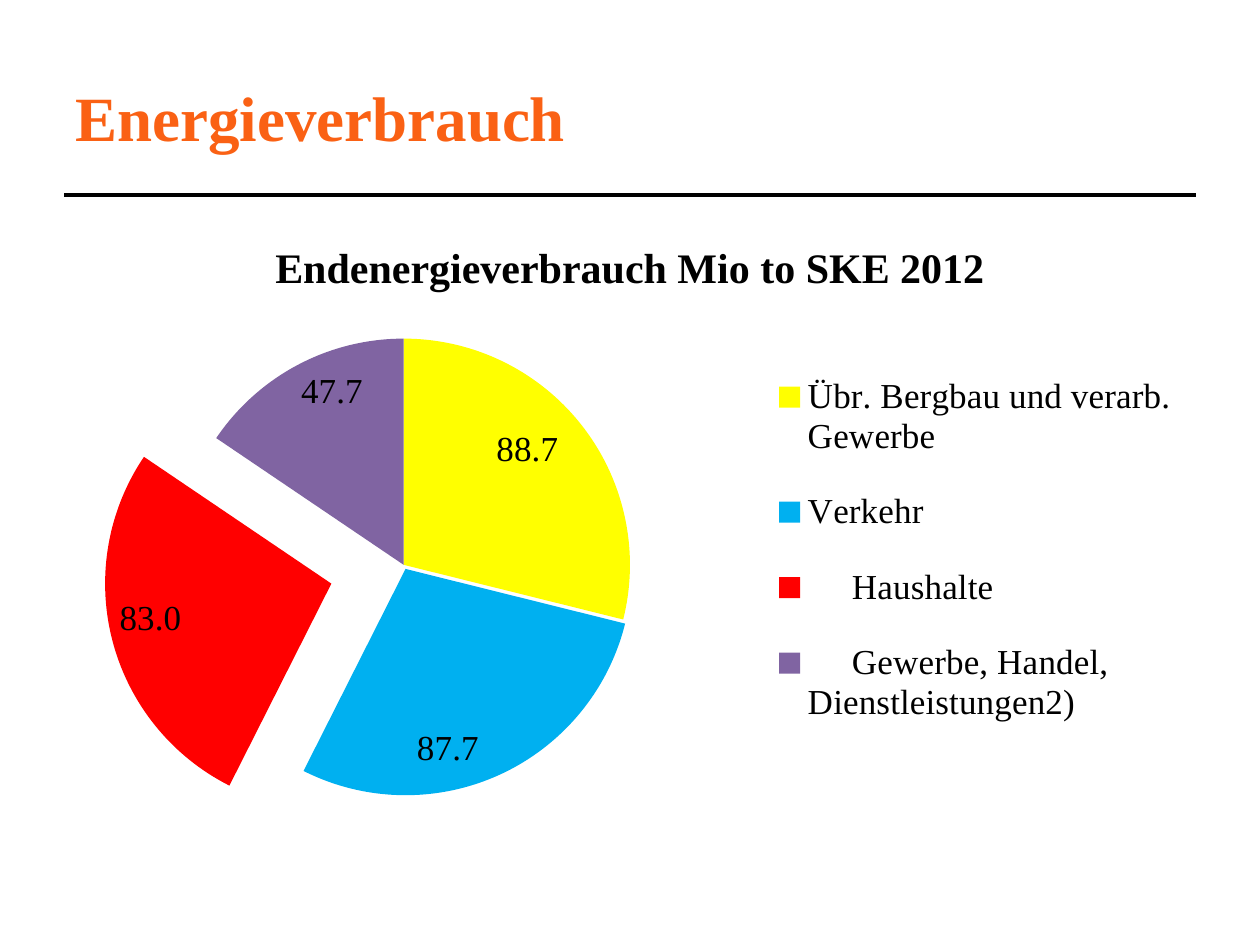
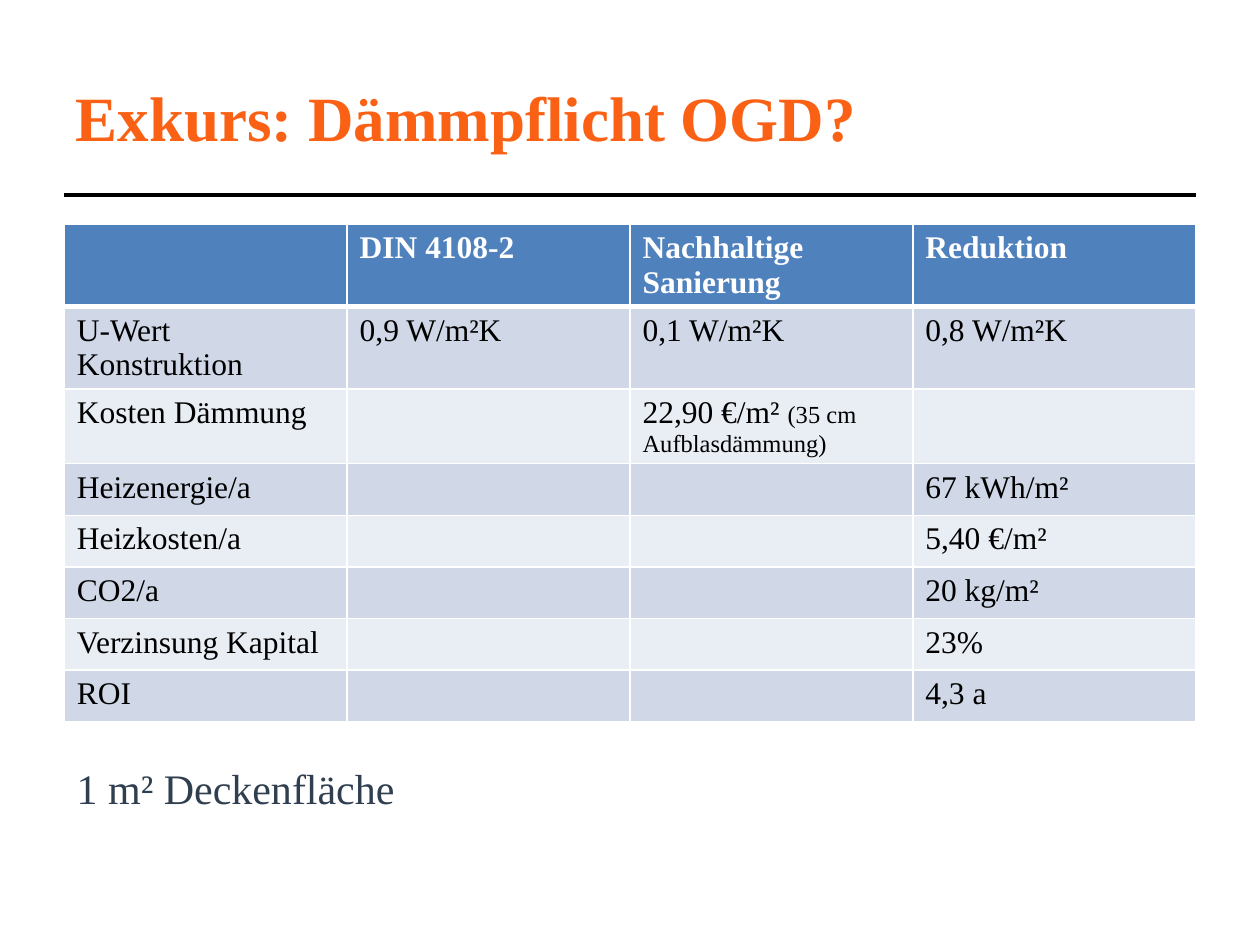
from lxml import etree
from pptx import Presentation
from pptx.chart.data import CategoryChartData
from pptx.dml.color import RGBColor
from pptx.enum.chart import XL_CHART_TYPE, XL_LABEL_POSITION, XL_LEGEND_POSITION
from pptx.enum.shapes import MSO_CONNECTOR
from pptx.enum.text import MSO_ANCHOR, PP_ALIGN
from pptx.oxml import parse_xml
from pptx.oxml.ns import nsdecls, qn
from pptx.util import Inches, Pt

FONT = "Times New Roman"
ORANGE, BLACK, WHITE, SLATE = "FA6114", "000000", "FFFFFF", "303F50"
HEADER_FILL = "4F81BD"
BAND_FILLS = ("D0D8E8", "E9EDF4")
LEFT, WIDTH = 0.51, 8.98
CHART_TITLE = "Endenergieverbrauch Mio to SKE 2012"
SECTORS = [
    ("Übr. Bergbau und verarb. Gewerbe", 88.7, "FFFF00", 0),
    ("Verkehr", 87.7, "00B0F0", 2),
    ("     Haushalte", 83.0, "FF0000", 33),
    ("     Gewerbe, Handel, Dienstleistungen2)", 47.7, "8064A2", 0),
]
INSULATION_ROWS = [
    ("", "DIN 4108-2", "Nachhaltige Sanierung", "Reduktion"),
    ("U-Wert Konstruktion", "0,9 W/m²K", "0,1 W/m²K", "0,8 W/m²K"),
    ("Kosten Dämmung", "", ("22,90 €/m² ", "(35 cm Aufblasdämmung)"), ""),
    ("Heizenergie/a", "", "", "67 kWh/m²"),
    ("Heizkosten/a", "", "", "5,40 €/m²"),
    ("CO2/a", "", "", "20 kg/m²"),
    ("Verzinsung Kapital", "", "", "23%"),
    ("ROI", "", "", "4,3 a"),
]


def color(value):
    """Turn a hex string into a colour."""
    return RGBColor.from_string(value)


def style_font(font, size, hex_color=BLACK, bold=False):
    """Apply the deck's typeface with a size, colour and weight."""
    font.name, font.size, font.bold = FONT, Pt(size), bold
    font.color.rgb = color(hex_color)


def add_titled_slide(presentation, title):
    """Add a slide with the orange title and the rule below it."""
    slide = presentation.slides.add_slide(presentation.slide_layouts[5])
    shape = slide.shapes.title
    shape.left, shape.top = Inches(0.5), Inches(0.3)
    shape.width, shape.height = Inches(6.86), Inches(1.25)
    shape.text_frame.vertical_anchor = MSO_ANCHOR.MIDDLE
    paragraph = shape.text_frame.paragraphs[0]
    paragraph.text = title
    paragraph.alignment = PP_ALIGN.LEFT
    style_font(paragraph.font, 36, ORANGE, True)
    rule = slide.shapes.add_connector(
        MSO_CONNECTOR.STRAIGHT, Inches(LEFT), Inches(1.55), Inches(LEFT + WIDTH), Inches(1.55))
    rule.line.color.rgb = color(BLACK)
    rule.line.width = Pt(2.25)
    etree.SubElement(rule._element.spPr, qn("a:effectLst"))
    return slide


def manual_layout(x, y, width, height, inner=False):
    """Build a chart layout from fractions of the chart area."""
    target = '<c:layoutTarget val="inner"/>' if inner else ""
    return parse_xml(
        f'<c:layout {nsdecls("c")}><c:manualLayout>{target}'
        '<c:xMode val="edge"/><c:yMode val="edge"/>'
        f'<c:x val="{x}"/><c:y val="{y}"/><c:w val="{width}"/><c:h val="{height}"/>'
        '</c:manualLayout></c:layout>')


def replace_layout(parent, layout, index):
    """Put a layout at the given child index, dropping any former one."""
    for former in parent.findall(qn("c:layout")):
        parent.remove(former)
    parent.insert(index, layout)


def add_consumption_pie(slide, left, top, width, height):
    """Add the pie of energy use by sector, with its legend and labels."""
    data = CategoryChartData()
    data.categories = [sector[0] for sector in SECTORS]
    data.add_series(CHART_TITLE, [sector[1] for sector in SECTORS])
    chart = slide.shapes.add_chart(
        XL_CHART_TYPE.PIE, Inches(left), Inches(top), Inches(width), Inches(height), data).chart
    style_font(chart.font, 10)
    chart.has_title = True
    paragraph = chart.chart_title.text_frame.paragraphs[0]
    paragraph.text = CHART_TITLE
    style_font(paragraph.font, 24, BLACK, True)
    chart.chart_title.include_in_layout = False
    chart.has_legend = True
    chart.legend.position = XL_LEGEND_POSITION.RIGHT
    chart.legend.include_in_layout = False
    style_font(chart.legend.font, 20)
    replace_layout(chart.legend._element, manual_layout(0.62, 0.21, 0.37, 0.69), 1)
    replace_layout(chart._chartSpace.chart.plotArea, manual_layout(0.1, 0.2, 0.4, 0.76, True), 0)

    plot = chart.plots[0]
    plot.vary_by_categories = True
    series = plot.series[0]
    for index, (_, _, fill, explosion) in enumerate(SECTORS):
        point_format = series.points[index].format
        point_format.fill.solid()
        point_format.fill.fore_color.rgb = color(fill)
        point_format.line.fill.background()
        if explosion:
            point = series._element.findall(qn("c:dPt"))[index]
            point.find(qn("c:spPr")).addprevious(
                parse_xml(f'<c:explosion {nsdecls("c")} val="{explosion}"/>'))
    labels = series.data_labels
    labels.show_value = True
    labels.number_format = "0.0\\ \\ "
    labels.number_format_is_linked = False
    labels.position = XL_LABEL_POSITION.INSIDE_END
    style_font(labels.font, 20)


def set_borders(cell, top, bottom):
    """Draw white cell borders, with the top and bottom widths in points."""
    properties = cell._tc.get_or_add_tcPr()
    for side, points in (("L", 1), ("R", 1), ("T", top), ("B", bottom)):
        properties.append(parse_xml(
            f'<a:ln{side} {nsdecls("a")} w="{Pt(points)}"><a:solidFill>'
            f'<a:srgbClr val="{WHITE}"/></a:solidFill></a:ln{side}>'))


def fill_cell(cell, content, header):
    """Write a cell; in a pair the second text is set smaller."""
    paragraph = cell.text_frame.paragraphs[0]
    style_font(paragraph.font, 18, WHITE if header else BLACK, header)
    texts = content if isinstance(content, tuple) else (content,)
    for text, size in zip(texts, (18, 14)):
        if text:
            run = paragraph.add_run()
            run.text = text
            style_font(run.font, size, WHITE if header else BLACK, header)


def add_insulation_table(slide, left, top, width, row_height):
    """Add the comparison table with a header and two alternating bands."""
    rows, columns = len(INSULATION_ROWS), len(INSULATION_ROWS[0])
    table = slide.shapes.add_table(
        rows, columns, Inches(left), Inches(top), Inches(width), Inches(row_height * rows)).table
    for row_index, contents in enumerate(INSULATION_ROWS):
        header = row_index == 0
        table.rows[row_index].height = Inches(row_height)
        for column_index, content in enumerate(contents):
            cell = table.cell(row_index, column_index)
            set_borders(cell, 3 if row_index == 1 else 1, 3 if header else 1)
            cell.fill.solid()
            cell.fill.fore_color.rgb = color(
                HEADER_FILL if header else BAND_FILLS[(row_index - 1) % 2])
            fill_cell(cell, content, header)


def add_area_note(slide, left, top, width, height):
    """Add the reference area below the table."""
    frame = slide.shapes.add_textbox(
        Inches(left), Inches(top), Inches(width), Inches(height)).text_frame
    frame.word_wrap = True
    paragraph = frame.paragraphs[0]
    paragraph.text = "1 m² Deckenfläche"
    style_font(paragraph.font, 24, SLATE)


def main():
    """Build and save both slides."""
    presentation = Presentation()
    presentation.slide_width, presentation.slide_height = Inches(10), Inches(7.5)
    consumption = add_titled_slide(presentation, "Energieverbrauch")
    add_consumption_pie(consumption, LEFT, 1.7, WIDTH, 4.8)
    insulation = add_titled_slide(presentation, "Exkurs: Dämmpflicht OGD?")
    add_insulation_table(insulation, LEFT, 1.78, WIDTH, 0.41)
    add_area_note(insulation, LEFT, 6, 8.53, 0.7)
    presentation.save("out.pptx")


if __name__ == "__main__":
    main()
